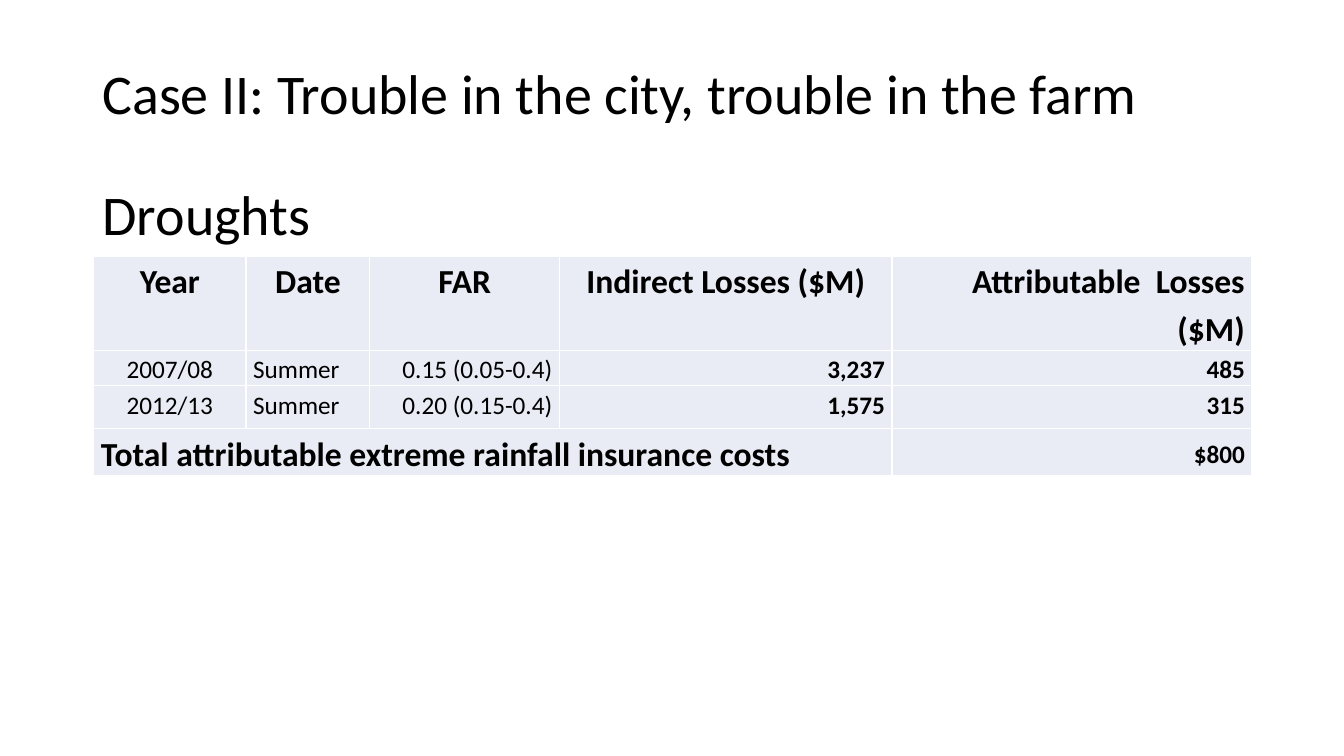
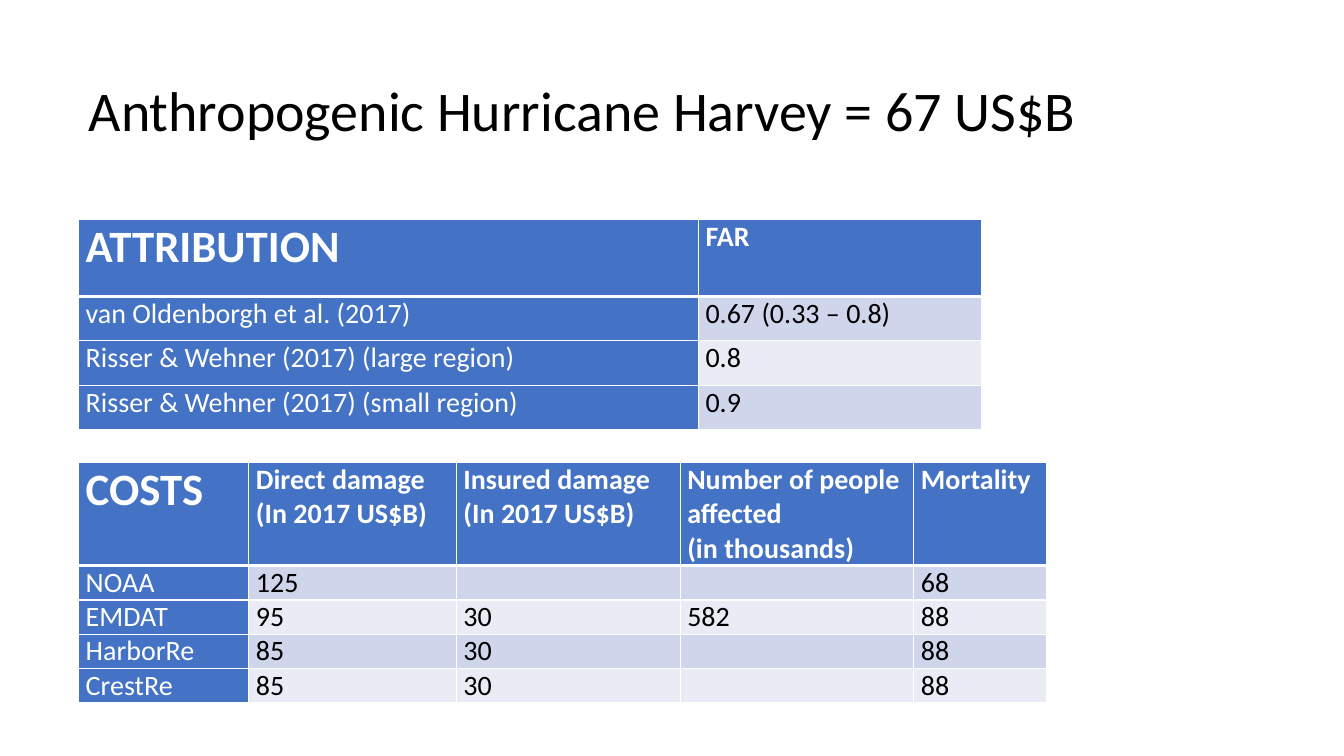
from dataclasses import dataclass
from typing import Callable

from lxml import etree
from pptx import Presentation
from pptx.dml.color import RGBColor
from pptx.enum import text as t
from pptx.oxml.ns import qn
from pptx.util import Cm, Pt

FONT = "Calibri"
BLACK, WHITE = "000000", "FFFFFF"
BLUE, BAND, PALE = "4472C4", "CFD5EA", "E9EBF5"
LEFT, MID, RIGHT = t.PP_ALIGN.LEFT, t.PP_ALIGN.CENTER, t.PP_ALIGN.RIGHT


@dataclass
class Look:
    fill: str = PALE
    ink: str = BLACK
    size: int = 18
    bold: bool = False
    align: t.PP_ALIGN = LEFT
    anchor: t.MSO_ANCHOR = t.MSO_ANCHOR.TOP
    lead: float = 1.0
    after: int = 0


@dataclass
class Grid:
    """Place, column widths and row heights are in centimetres."""
    left: float
    top: float
    cols: list[float]
    rows: list[float]
    data: list[list[str]]
    look: Callable[[int, int], Look]
    rule: int = 1


def paint(font, ink: str, size: int, bold: bool = False) -> None:
    font.name, font.size, font.bold = FONT, Pt(size), bold
    font.color.rgb = RGBColor.from_string(ink)


def edge(cell, side: str, width: int) -> None:
    line = etree.SubElement(cell._tc.get_or_add_tcPr(), qn(f"a:ln{side}"), w=str(Pt(width)))
    fill = etree.SubElement(line, qn("a:solidFill"))
    etree.SubElement(fill, qn("a:srgbClr"), val=WHITE)


def dress(cell, words: str, look: Look) -> None:
    cell.margin_left = cell.margin_right = Cm(0.18)
    cell.margin_top = cell.margin_bottom = 0
    cell.vertical_anchor = look.anchor
    cell.fill.solid()
    cell.fill.fore_color.rgb = RGBColor.from_string(look.fill)
    cell.text_frame.text = words
    for para in cell.text_frame.paragraphs:
        para.alignment, para.line_spacing = look.align, look.lead
        para.space_after = Pt(look.after)
        paint(para.font, look.ink, look.size, look.bold)


def draw(slide, grid: Grid):
    """Add the table; grid.rule is the weight of the line under its header."""
    table = slide.shapes.add_table(
        len(grid.rows), len(grid.cols), Cm(grid.left), Cm(grid.top),
        Cm(sum(grid.cols)), Cm(sum(grid.rows))).table
    for col, width in zip(table.columns, grid.cols):
        col.width = Cm(width)
    for row, height in zip(table.rows, grid.rows):
        row.height = Cm(height)
    for r, line in enumerate(grid.data):
        for c, words in enumerate(line):
            cell = table.cell(r, c)
            for side in "LRTB":
                under = (r, side) in ((0, "B"), (1, "T"))
                edge(cell, side, grid.rule if under else 1)
            dress(cell, words, grid.look(r, c))
    return table


def start(deck, left: float, width: float, height: float, lines: list[str]):
    """Add a slide with its title; further title lines follow after a gap."""
    slide = deck.slides.add_slide(deck.slide_layouts[5])
    title = slide.shapes.title
    title.left, title.top = Cm(left), Cm(1.01)
    title.width, title.height = Cm(width), Cm(height)
    frame = title.text_frame
    frame.text = "\n".join(lines)
    frame.word_wrap, frame.auto_size = True, t.MSO_AUTO_SIZE.NONE
    frame.vertical_anchor = t.MSO_ANCHOR.MIDDLE
    for i, para in enumerate(frame.paragraphs):
        para.alignment, para.line_spacing = LEFT, 0.9
        para.space_before = Pt(43 if i else 0)
        paint(para.font, BLACK, 40)
    return slide


def drought(r: int, c: int) -> Look:
    if r == 0:
        return Look(size=24, bold=True, align=RIGHT if c == 4 else MID, lead=1.15)
    if r == 3:
        if c < 4:
            return Look(size=24, bold=True, lead=1.15, after=10)
        return Look(bold=True, align=RIGHT, anchor=t.MSO_ANCHOR.MIDDLE, lead=1.15, after=10)
    align = (MID, LEFT, RIGHT, RIGHT, RIGHT)[c]
    return Look(bold=c > 2, align=align, lead=1.15, after=10)


def storm(r: int, c: int) -> Look:
    if r == 0:
        return Look(BLUE, WHITE, 20 if c else 32, True)
    if c == 0:
        return Look(BLUE, WHITE, 20)
    return Look(BAND if r % 2 else PALE, BLACK, 20)


LOSS = Grid(2.36, 6.45, [3.84, 3.12, 4.78, 8.38, 9.07], [2.3, 0.88, 1.09, 1.15], [
    ["Year", "Date", "FAR", "Indirect Losses ($M)", "Attributable  Losses ($M)"],
    ["2007/08", "Summer", "0.15 (0.05-0.4)", "3,237", "485"],
    ["2012/13", "Summer", "0.20 (0.15-0.4)", "1,575", "315"],
    ["Total attributable extreme rainfall insurance costs", "", "", "", "$800"],
], drought)

SHARE = Grid(1.98, 5.54, [15.62, 7.14], [1.93] + [1.12] * 3, [
    ["ATTRIBUTION", "FAR"],
    ["van Oldenborgh et al. (2017)", "0.67 (0.33 – 0.8)"],
    ["Risser & Wehner (2017) (large region)", "0.8"],
    ["Risser & Wehner (2017) (small region)", "0.9"],
], storm, 3)

COSTS = Grid(1.98, 11.66, [4.29, 5.23, 5.64, 5.89, 3.35], [2.57] + [0.86] * 4, [
    ["COSTS", "Direct damage\n(In 2017 US$B)", "Insured damage\n(In 2017 US$B)",
     "Number of people affected\n(in thousands)", "Mortality"],
    ["NOAA", "125", "", "", "68"],
    ["EMDAT", "95", "30", "582", "88"],
    ["HarborRe", "85", "30", "", "88"],
    ["CrestRe", "85", "30", "", "88"],
], storm, 3)


def main() -> None:
    deck = Presentation()
    deck.slide_width, deck.slide_height = Cm(33.87), Cm(19.05)
    slide = start(deck, 2.33, 29.21, 5.87,
                  ["Case II: Trouble in the city, trouble in the farm", "Droughts"])
    table = draw(slide, LOSS)
    table.cell(3, 0).merge(table.cell(3, 3))

    slide = start(deck, 1.98, 29.56, 3.68, ["Anthropogenic Hurricane Harvey = 67 US$B"])
    for grid in (SHARE, COSTS):
        draw(slide, grid)
    deck.save("out.pptx")


if __name__ == "__main__":
    main()
